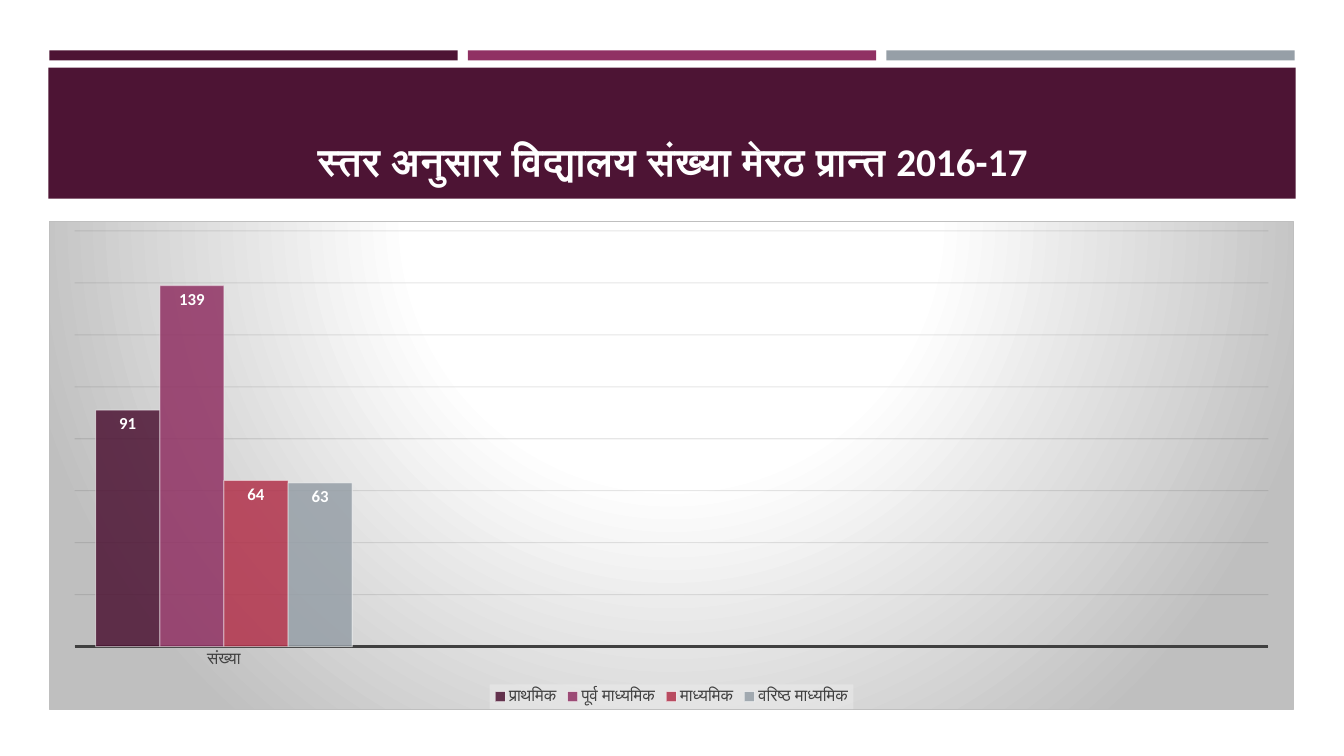
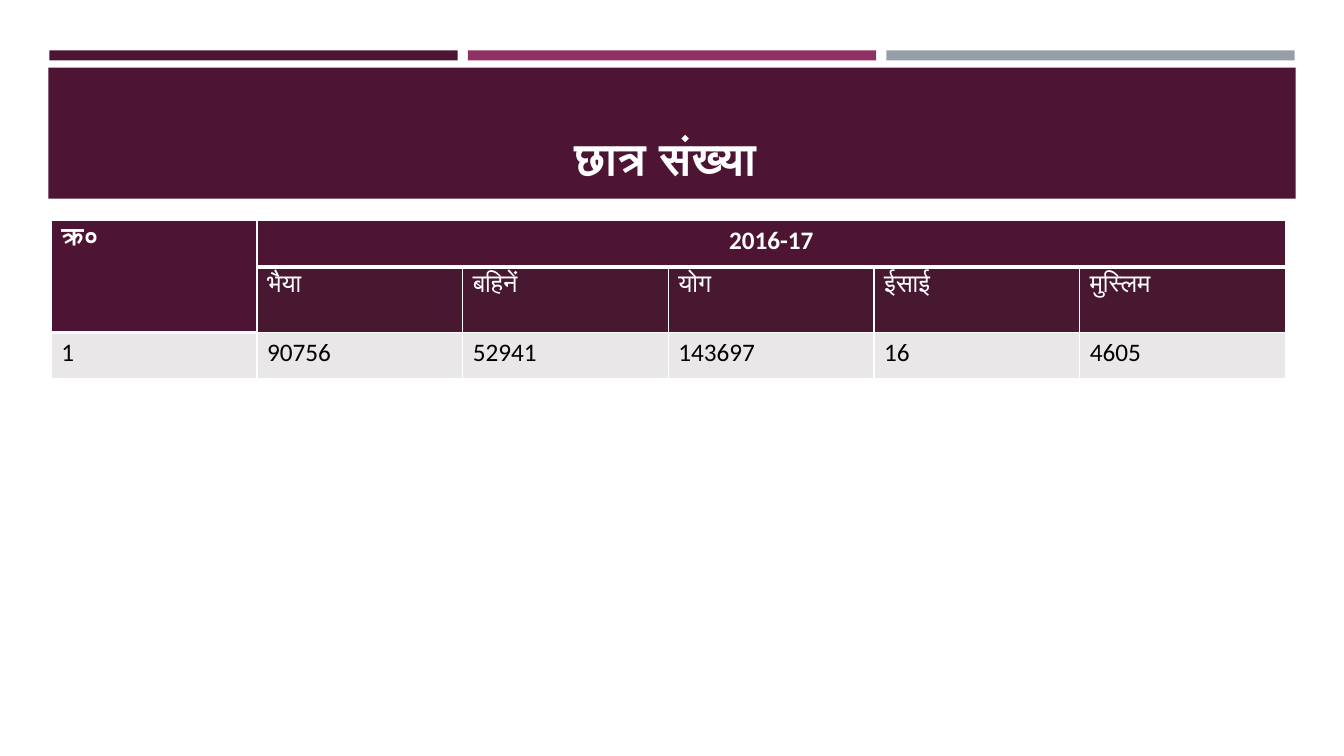
from dataclasses import dataclass

from lxml.etree import SubElement
from pptx import Presentation
from pptx.chart.data import CategoryChartData
from pptx.dml.color import RGBColor
from pptx.enum.chart import (XL_CHART_TYPE, XL_LABEL_POSITION,
                             XL_LEGEND_POSITION, XL_TICK_MARK)
from pptx.enum.shapes import MSO_SHAPE
from pptx.enum.text import MSO_ANCHOR, MSO_AUTO_SIZE, PP_ALIGN
from pptx.oxml import parse_xml
from pptx.oxml.ns import nsdecls, qn
from pptx.util import Pt

PX = 9144  # EMU in one px, 100 px to the inch
FONT = "Calibri"
RECT = MSO_SHAPE.RECTANGLE
CENTER = PP_ALIGN.CENTER
BOTTOM = MSO_ANCHOR.BOTTOM
FIXED = MSO_AUTO_SIZE.NONE
COLUMN = XL_CHART_TYPE.COLUMN_CLUSTERED
INSIDE = XL_LABEL_POSITION.INSIDE_END
LEGEND = XL_LEGEND_POSITION.BOTTOM
NO_TICK = XL_TICK_MARK.NONE

HEX = {
    "plum": "4D1434", "mauve": "903163", "red": "B2324B", "gray": "969FA7",
    "dark": "481831", "pale": "E9E7E8", "white": "FFFFFF", "black": "000000",
    "text": "404040", "grid": "0D0D0D", "edge": "BFBFBF", "key": "F2F2F2",
}


@dataclass
class Band:
    left: int
    top: int
    width: int
    height: int
    color: str


@dataclass
class Level:
    name: str
    count: int
    color: str


@dataclass
class Row:
    height: int
    fill: str
    color: str
    bold: bool
    texts: list[str]


BANDS = [Band(49 + 415 * i, 50, 405, 10, color)
         for i, color in enumerate(["plum", "mauve", "gray"])]
BANDS.append(Band(48, 67, 1237, 130, "plum"))

LEVELS = [
    Level("प्राथमिक", 91, "plum"),
    Level("पूर्व माध्यमिक", 139, "mauve"),
    Level("माध्यमिक", 64, "red"),
    Level("वरिष्ठ माध्यमिक", 63, "gray"),
]

ROWS = [
    Row(46, "plum", "white", True, ["क्र०", "2016-17", "", "", "", ""]),
    Row(65, "dark", "white", False,
        ["", "भैया", "बहिनें", "योग", "ईसाई", "मुस्लिम"]),
    Row(46, "pale", "black", False,
        ["1", "90756", "52941", "143697", "16", "4605"]),
]


def rgb(name: str) -> RGBColor:
    return RGBColor.from_string(HEX[name])


def place(left: int, top: int, width: int, height: int) -> list[int]:
    return [n * PX for n in (left, top, width, height)]


def style(font, size: float, color: str, bold: bool = False) -> None:
    font.name, font.size, font.bold = FONT, Pt(size), bold
    font.color.rgb = rgb(color)


def stroke(line, color: str, width: float) -> None:
    line.color.rgb = rgb(color)
    line.width = Pt(width)


def paint(fill, color: str) -> None:
    fill.solid()
    fill.fore_color.rgb = rgb(color)


def add_bands(slide, layout) -> None:
    """Draw the bands once and hand them to the layout all slides use."""
    for i, band in enumerate(BANDS):
        shape = slide.shapes.add_shape(
            RECT, *place(band.left, band.top, band.width, band.height))
        shape.shadow.inherit = False
        paint(shape.fill, band.color)
        shape.line.fill.background()
        shape.element.nvSpPr.cNvPr.set("id", str(20 + i))
        layout.shapes.element.append(shape.element)


def set_title(slide, text: str, left: int, size: float) -> None:
    title = slide.shapes.title
    title.left, title.top, title.width, title.height = place(
        left, 77, 1206, 111)
    frame = title.text_frame
    frame.text = text
    frame.word_wrap = True
    frame.auto_size = FIXED
    frame.vertical_anchor = BOTTOM
    para = frame.paragraphs[0]
    para.alignment = CENTER
    style(para.runs[0].font, size, "white", True)


def fade(chart, path: str, pct: int) -> None:
    """Set the opacity of every colour under the XPath."""
    for node in chart.element.xpath(path + "//a:srgbClr"):
        SubElement(node, qn("a:alpha"), val=str(pct * 1000))


def add_back(chart) -> None:
    """Give the chart its radial backdrop and the legend a light plate."""
    stops = "".join(
        f'<a:gs pos="{pos * 1000}"><a:srgbClr val="{HEX[color]}"/></a:gs>'
        for pos, color in [(0, "white"), (39, "white"), (100, "edge")])
    back = parse_xml(
        f'<c:spPr {nsdecls("c", "a")}><a:gradFill><a:gsLst>{stops}</a:gsLst>'
        '<a:path path="circle"><a:fillToRect l="50000" t="-80000" r="50000" '
        'b="180000"/></a:path></a:gradFill><a:ln w="9525"><a:solidFill>'
        f'<a:srgbClr val="{HEX["edge"]}"/></a:solidFill></a:ln></c:spPr>')
    plate = parse_xml(
        f'<c:spPr {nsdecls("c", "a")}><a:solidFill>'
        f'<a:srgbClr val="{HEX["key"]}"/></a:solidFill></c:spPr>')
    chart.element.xpath("./c:chart")[0].addnext(back)
    chart.element.xpath(".//c:legend/c:overlay")[0].addnext(plate)
    fade(chart, ".//c:legend/c:spPr", 39)


def add_levels(slide) -> None:
    data = CategoryChartData()
    data.categories = ["संख्या", "", "", ""]
    for level in LEVELS:
        data.add_series(level.name, [level.count, None, None, None])
    chart = slide.shapes.add_chart(
        COLUMN, *place(49, 219, 1234, 485), data).chart
    style(chart.font, 10, "black")
    chart.has_title = False
    chart.has_legend = True
    chart.legend.position = LEGEND
    chart.legend.include_in_layout = False
    style(chart.legend.font, 12, "text")

    cat = chart.category_axis
    cat.major_tick_mark = cat.minor_tick_mark = NO_TICK
    style(cat.tick_labels.font, 12, "text")
    stroke(cat.format.line, "text", 1.5)
    val = chart.value_axis
    val.visible = False
    val.minimum_scale, val.maximum_scale, val.major_unit = 0, 160, 20
    val.has_major_gridlines = True
    stroke(val.major_gridlines.format.line, "grid", 0.75)

    plot = chart.plots[0]
    plot.vary_by_categories = False
    plot.gap_width, plot.overlap = 65, 0
    for level, series in zip(LEVELS, plot.series):
        paint(series.format.fill, level.color)
        stroke(series.format.line, "white", 0.75)
        tags = series.data_labels
        tags.show_value = True
        tags.position = INSIDE
        style(tags.font, 12, "white", True)
    fade(chart, ".//c:majorGridlines", 10)
    fade(chart, ".//c:ser/c:spPr/a:solidFill", 85)
    fade(chart, ".//c:ser/c:spPr/a:ln", 50)
    add_back(chart)


def edge(cell, widths: dict[str, int]) -> None:
    """Draw white cell borders, given in points by side."""
    props = cell._tc.get_or_add_tcPr()
    for i, (side, width) in enumerate(widths.items()):
        props.insert(i, parse_xml(
            f'<a:ln{side} {nsdecls("a")} w="{Pt(width)}"><a:solidFill>'
            f'<a:srgbClr val="{HEX["white"]}"/></a:solidFill></a:ln{side}>'))


def add_counts(slide) -> None:
    cols = len(ROWS[0].texts)
    high = sum(row.height for row in ROWS)
    table = slide.shapes.add_table(
        len(ROWS), cols, *place(51, 219, 204 * cols, high)).table
    table.cell(0, 0).merge(table.cell(1, 0))
    table.cell(0, 1).merge(table.cell(0, cols - 1))
    for r, row in enumerate(ROWS):
        table.rows[r].height = row.height * PX
        for c, text in enumerate(row.texts):
            cell = table.cell(r, c)
            head = r == 0 or (r == 1 and c == 0)
            under = (r == 1 and c > 0) or (r == 2 and c == 0)
            paint(cell.fill, "plum" if head else row.fill)
            edge(cell, {"L": 1, "R": 1, "T": 3 if under else 1,
                        "B": 3 if head else 1})
            if text:
                para = cell.text_frame.paragraphs[0]
                para.text = text
                style(para.runs[0].font, 18, row.color, row.bold)
    table.cell(0, 1).text_frame.paragraphs[0].alignment = CENTER


def main() -> None:
    deck = Presentation()
    deck.slide_width, deck.slide_height = 1333 * PX, 750 * PX
    layout = deck.slide_layouts[5]
    first, second = [deck.slides.add_slide(layout) for _ in range(2)]
    add_bands(first, layout)
    set_title(first, "स्तर अनुसार विद्यालय संख्या मेरठ प्रान्त 2016-17", 64, 28)
    add_levels(first)
    set_title(second, "छात्र संख्या", 57, 32.4)
    add_counts(second)
    deck.save("out.pptx")


if __name__ == "__main__":
    main()
